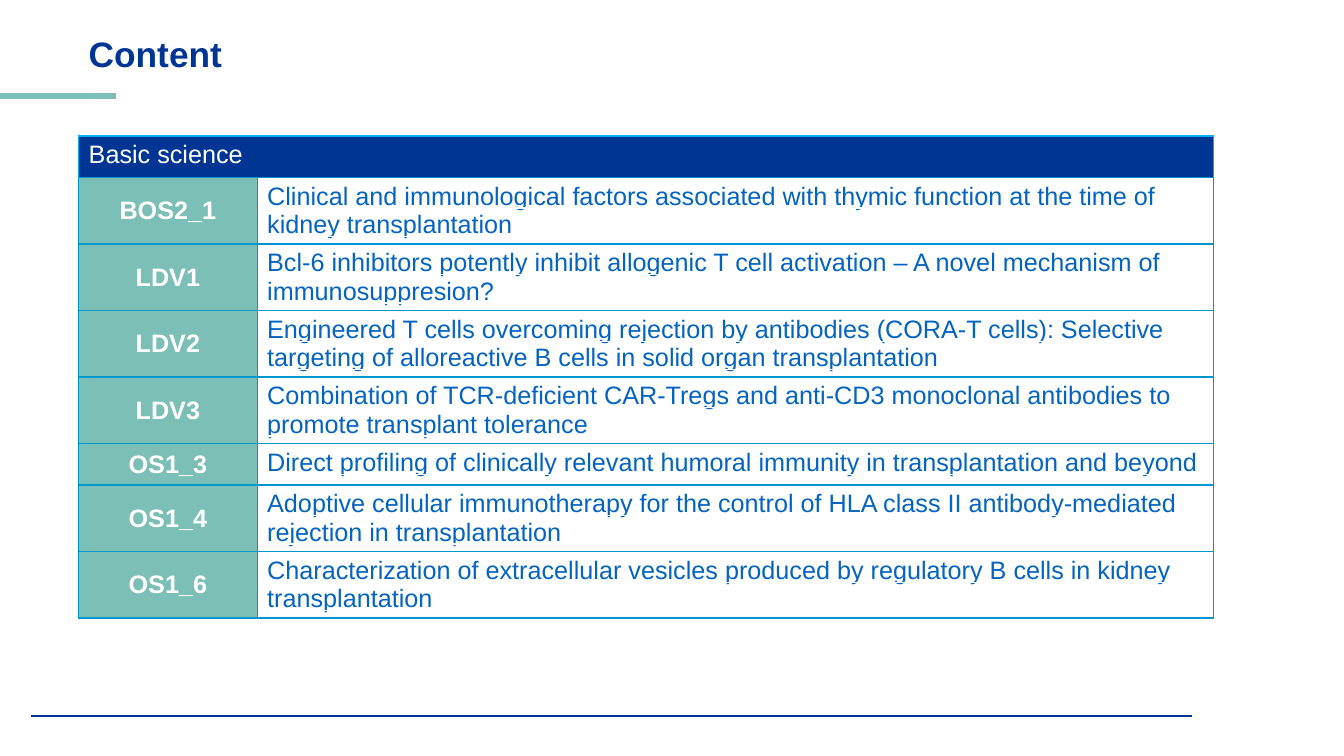
from lxml.etree import SubElement
from pptx import Presentation
from pptx.dml.color import RGBColor
from pptx.enum.shapes import MSO_CONNECTOR
from pptx.enum.text import MSO_ANCHOR, MSO_AUTO_SIZE, PP_ALIGN
from pptx.oxml import parse_xml
from pptx.oxml.ns import nsdecls, qn
from pptx.util import Inches, Pt

WIDTH, HEIGHT = Inches(13.33), Inches(7.5)
HUES = {"navy": "003594", "teal": "7CBFB6", "blue": "0563C1",
        "edge": "0097CE", "sky": "00B0F0", "white": "FFFFFF"}
TALKS = [
    ("BOS2_1", "Clinical and immunological factors associated with thymic function at the time of kidney transplantation"),
    ("LDV1", "Bcl-6 inhibitors potently inhibit allogenic T cell activation – A novel mechanism of immunosuppresion?"),
    ("LDV2", "Engineered T cells overcoming rejection by antibodies (CORA-T cells): Selective targeting of alloreactive B cells in solid organ transplantation"),
    ("LDV3", "Combination of TCR-deficient CAR-Tregs and anti-CD3 monoclonal antibodies to promote transplant tolerance"),
    ("OS1_3", "Direct profiling of clinically relevant humoral immunity in transplantation and beyond"),
    ("OS1_4", "Adoptive cellular immunotherapy for the control of HLA class II antibody-mediated rejection in transplantation"),
    ("OS1_6", "Characterization of extracellular vesicles produced by regulatory B cells in kidney transplantation"),
]


def across(share):
    return round(WIDTH * share / 100)


def down(share):
    return round(HEIGHT * share / 100)


def color(name):
    return RGBColor.from_string(HUES[name])


def add_run(para, text, size, hue, bold=False, under=None):
    run = para.add_run()
    run.text = text
    font = run.font
    font.size, font.bold = Pt(size), bold
    font.color.rgb = color(hue)
    if under:
        font.underline = True
        fill = SubElement(SubElement(font._element, qn("a:uFill")), qn("a:solidFill"))
        SubElement(fill, qn("a:srgbClr"), val=HUES[under])
    font.name = "Arial"


def add_rule(slide, left, right, top, hue, weight):
    rule = slide.shapes.add_connector(
        MSO_CONNECTOR.STRAIGHT, across(left), down(top), across(right), down(top))
    rule.line.color.rgb = color(hue)
    rule.line.width = Pt(weight)
    SubElement(rule._element.spPr, qn("a:effectLst"))


def set_title(slide, text):
    title = slide.shapes.title
    title.left, title.top = across(5.85), down(4.53)
    title.width, title.height = across(86.27), down(5.87)
    frame = title.text_frame
    frame.auto_size = MSO_AUTO_SIZE.NONE
    frame.vertical_anchor = MSO_ANCHOR.MIDDLE
    para = frame.paragraphs[0]
    para.alignment, para.line_spacing = PP_ALIGN.LEFT, 0.9
    add_run(para, text, 25.2, "navy", True)


def style_cell(cell, fill, edge):
    cell.fill.solid()
    cell.fill.fore_color.rgb = color(fill)
    props = cell._tc.get_or_add_tcPr()
    for spot, side in enumerate("LRTB"):
        props.insert(spot, parse_xml(
            f'<a:ln{side} {nsdecls("a")} w="{Pt(1)}"><a:solidFill>'
            f'<a:srgbClr val="{HUES[edge]}"/></a:solidFill></a:ln{side}>'))


def add_talks(slide, head, talks):
    height = down(66.8)
    frame = slide.shapes.add_table(
        len(talks) + 1, 2, across(5.85), down(18), across(84.47), height)
    table = frame.table
    table.first_row = table.horz_banding = False
    for column, share in zip(table.columns, (13.28, 71.19)):
        column.width = across(share)
    for row in table.rows:
        row.height = down(5.47)
    frame.height = height

    first, last = table.rows[0].cells
    first.merge(last)
    for cell in (first, last):
        style_cell(cell, "navy", "sky")
    add_run(first.text_frame.paragraphs[0], head, 18, "white")

    for index, (code, topic) in enumerate(talks, 1):
        label, body = table.cell(index, 0), table.cell(index, 1)
        style_cell(label, "teal", "edge")
        style_cell(body, "white", "edge")
        label.vertical_anchor = MSO_ANCHOR.MIDDLE
        para = label.text_frame.paragraphs[0]
        para.alignment = PP_ALIGN.CENTER
        add_run(para, code, 18, "white", True)
        add_run(body.text_frame.paragraphs[0], topic, 18, "blue", under="white")


def main():
    deck = Presentation()
    deck.slide_width, deck.slide_height = WIDTH, HEIGHT
    slide = deck.slides.add_slide(deck.slide_layouts.get_by_name("Title Only"))
    add_rule(slide, 0, 8.63, 12.67, "teal", 4.5)
    add_rule(slide, 2.33, 88.67, 94.67, "navy", 1.5)
    set_title(slide, "Content")
    add_talks(slide, "Basic science", TALKS)
    deck.save("out.pptx")


if __name__ == "__main__":
    main()
